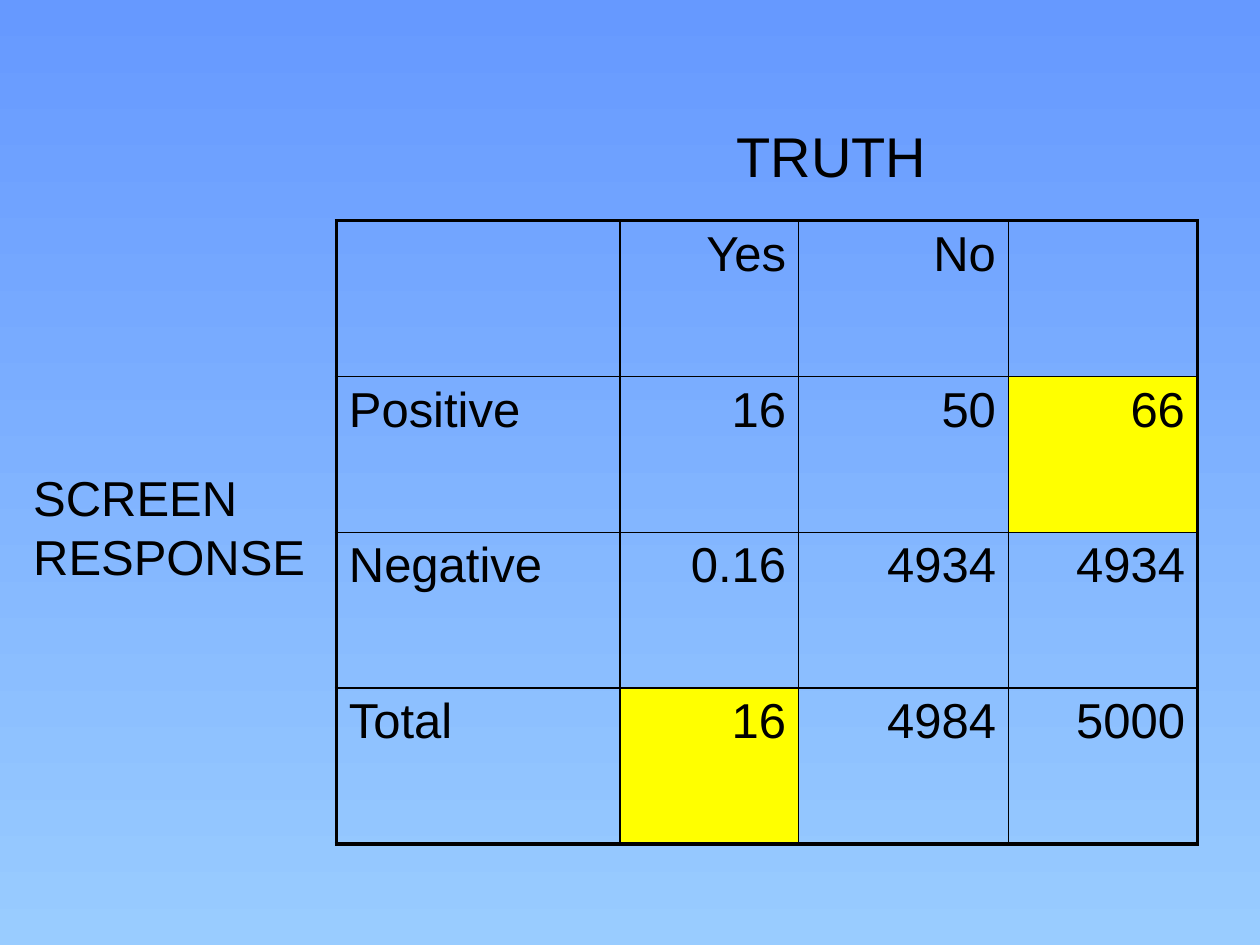
from dataclasses import dataclass

from lxml.etree import SubElement
from pptx import Presentation
from pptx.dml.color import RGBColor as Rgb
from pptx.enum.text import MSO_AUTO_SIZE as AutoSize, PP_ALIGN as Align
from pptx.oxml.ns import qn
from pptx.util import Cm, Pt

COLORS = {"sky_top": "6699FF", "sky_bottom": "99CCFF", "ink": "000000", "highlight": "FFFF00"}
FONT = "Arial"
ROWS = [
    ["", "Yes", "No", ""],
    ["Positive", "16", "50", "66"],
    ["Negative", "0.16", "4934", "4934"],
    ["Total", "16", "4984", "5000"],
]
HIGHLIGHTED = {(1, 3), (3, 1)}
COLUMN_WIDTHS = [5.72, 3.6, 4.23, 3.81]
ROW_HEIGHT = 3.14
OUTER_LINE, INNER_LINE = 2.25, 1


@dataclass
class Label:
    """A heading beside the table, with its place in centimetres."""
    text: str
    left: float
    top: float
    width: float
    height: float
    size: int


LABELS = [
    Label("TRUTH", 14.6, 2.33, 10.8, 1.6, 32),
    Label("SCREEN\vRESPONSE", 0.42, 9.31, 10.8, 2.62, 28),
]


def style_paragraph(paragraph, size: int, align: Align = Align.LEFT) -> None:
    """Set alignment and font of one paragraph."""
    paragraph.alignment = align
    paragraph.font.name = FONT
    paragraph.font.size = Pt(size)
    paragraph.font.color.rgb = Rgb.from_string(COLORS["ink"])


def add_border(cell, side: str, width: float) -> None:
    """Draw one border of a cell."""
    properties = cell._tc.get_or_add_tcPr()
    line = SubElement(properties, qn(f"a:ln{side}"), w=str(Pt(width)))
    SubElement(SubElement(line, qn("a:solidFill")), qn("a:srgbClr"), val=COLORS["ink"])


def add_label(slide, label: Label) -> None:
    """Add a heading as a text box."""
    box = slide.shapes.add_textbox(Cm(label.left), Cm(label.top), Cm(label.width), Cm(label.height))
    frame = box.text_frame
    frame.word_wrap = True
    frame.auto_size = AutoSize.SHAPE_TO_FIT_TEXT
    frame.text = label.text
    style_paragraph(frame.paragraphs[0], label.size)


def add_screening_table(slide) -> None:
    """Add the table of screen response against truth."""
    last_row, last_column = len(ROWS) - 1, len(COLUMN_WIDTHS) - 1
    table = slide.shapes.add_table(
        len(ROWS), len(COLUMN_WIDTHS), Cm(6.78), Cm(4.45),
        Cm(sum(COLUMN_WIDTHS)), Cm(ROW_HEIGHT * len(ROWS)),
    ).table
    table.first_row = table.horz_banding = False
    for column, width in zip(table.columns, COLUMN_WIDTHS):
        column.width = Cm(width)
    for r, values in enumerate(ROWS):
        table.rows[r].height = Cm(ROW_HEIGHT)
        for c, value in enumerate(values):
            cell = table.cell(r, c)
            cell.text = value
            style_paragraph(cell.text_frame.paragraphs[0], 28, Align.RIGHT if c else Align.LEFT)
            outer_sides = {"L": c == 0, "R": c == last_column, "T": r == 0, "B": r == last_row}
            for side, is_outer in outer_sides.items():
                add_border(cell, side, OUTER_LINE if is_outer else INNER_LINE)
            if (r, c) in HIGHLIGHTED:
                cell.fill.solid()
                cell.fill.fore_color.rgb = Rgb.from_string(COLORS["highlight"])
            else:
                cell.fill.background()


def main() -> None:
    """Build and save the slide."""
    deck = Presentation()
    deck.slide_width, deck.slide_height = Cm(25.4), Cm(19.05)
    slide = deck.slides.add_slide(deck.slide_layouts[6])
    sky = slide.background.fill
    sky.gradient()
    sky.gradient_angle = 270
    for stop, name in zip(sky.gradient_stops, ("sky_top", "sky_bottom")):
        stop.color.rgb = Rgb.from_string(COLORS[name])
    add_screening_table(slide)
    for label in LABELS:
        add_label(slide, label)
    deck.save("out.pptx")


if __name__ == "__main__":
    main()
